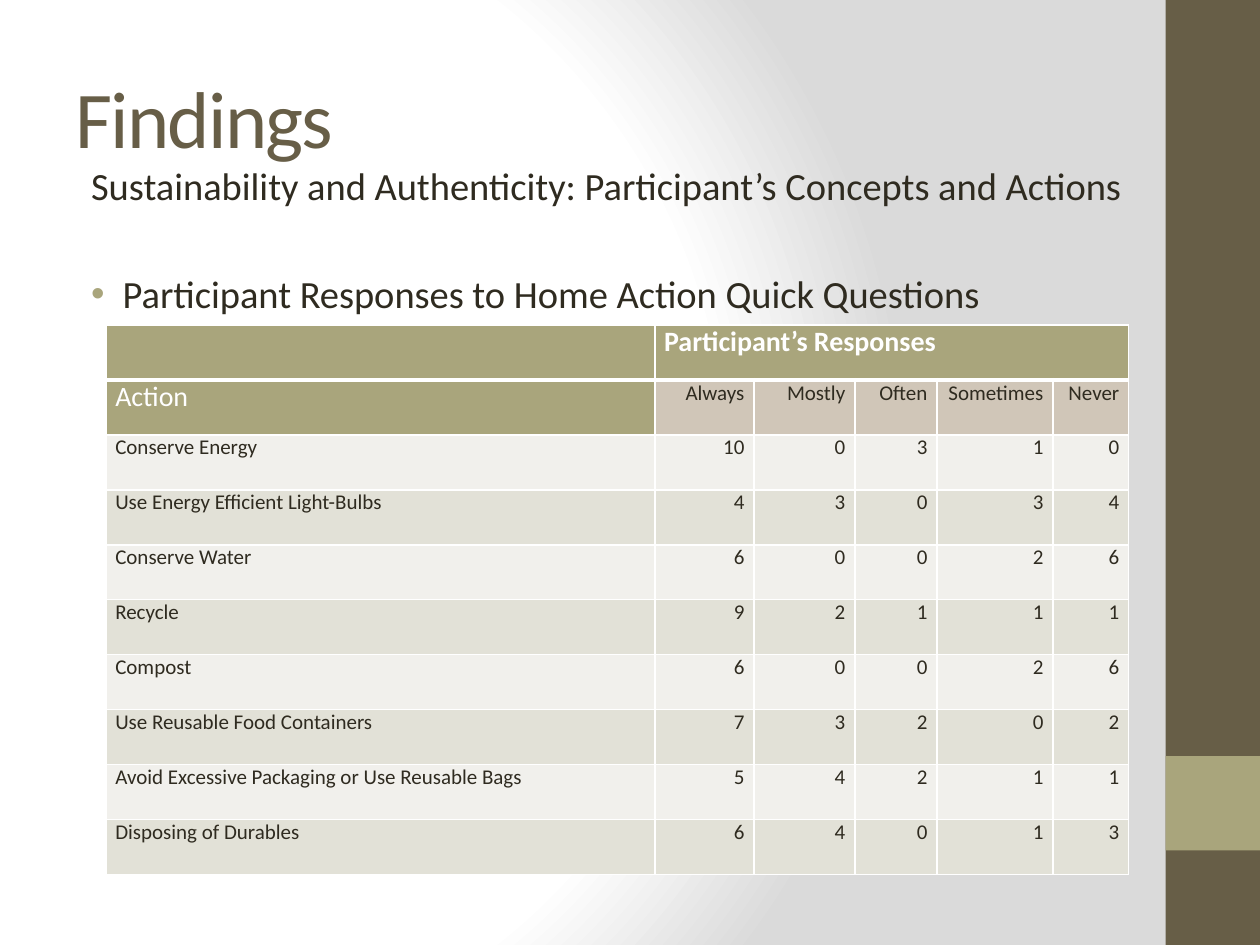
from dataclasses import dataclass

from pptx import Presentation
from pptx.dml.color import RGBColor
from pptx.enum.shapes import MSO_SHAPE
from pptx.enum.text import MSO_ANCHOR, PP_ALIGN
from pptx.oxml import parse_xml
from pptx.oxml.ns import nsdecls, qn
from pptx.util import Pt

RECTANGLE = MSO_SHAPE.RECTANGLE
MIDDLE = MSO_ANCHOR.MIDDLE
TOP = MSO_ANCHOR.TOP
JUSTIFY = PP_ALIGN.JUSTIFY
RIGHT = PP_ALIGN.RIGHT


@dataclass(frozen=True)
class Theme:
    font: str = "Calibri"
    brown: str = "675E47"
    olive: str = "A9A57C"
    ink: str = "2F2B20"
    white: str = "FFFFFF"
    grey: str = "DADADA"
    sand: str = "D0C6B8"
    bands: tuple = ("F1F0EC", "E2E1D7")
    title_size: float = 46
    body_size: float = 22
    heading_size: float = 16
    cell_size: float = 12


class FindingsPage:
    def __init__(self, deck, theme):
        self.theme = theme
        self.page = deck.slides.add_slide(deck.slide_layouts[6])

    def background(self):
        self.page.background.fill.gradient()
        gradient = self.page.element.find(".//" + qn("a:gradFill"))
        stops = ((0, self.theme.white), (75, self.theme.white), (100, self.theme.grey))
        marks = "".join(
            f'<a:gs pos="{place * 1000}"><a:srgbClr val="{color}"/></a:gs>'
            for place, color in stops
        )
        gradient.getparent().replace(gradient, parse_xml(
            f'<a:gradFill {nsdecls("a")} rotWithShape="1"><a:gsLst>{marks}</a:gsLst>'
            '<a:path path="circle"><a:fillToRect l="20000" t="50000" r="100000" b="50000"/>'
            '</a:path></a:gradFill>'
        ))

    def block(self, left, top, width, height, color):
        box = self.page.shapes.add_shape(RECTANGLE, Pt(left), Pt(top), Pt(width), Pt(height))
        box.shadow.inherit = False
        box.fill.solid()
        box.fill.fore_color.rgb = RGBColor.from_string(color)
        box.line.fill.background()

    def text_box(self, left, top, width, height, anchor=TOP):
        box = self.page.shapes.add_textbox(Pt(left), Pt(top), Pt(width), Pt(height))
        frame = box.text_frame
        frame.word_wrap = True
        frame.vertical_anchor = anchor
        return frame

    def set_text(self, para, text, size, color, bold=False):
        para.text = text
        para.font.name = self.theme.font
        para.font.size = Pt(size)
        para.font.bold = bold
        para.font.color.rgb = RGBColor.from_string(color)

    def title(self, text):
        para = self.text_box(36, 21.6, 600, 90, MIDDLE).paragraphs[0]
        self.set_text(para, text, self.theme.title_size, self.theme.brown)
        para.runs[0]._r.get_or_add_rPr().set("spc", "-100")

    def body(self, subtitle, point):
        frame = self.text_box(36, 89.3, 626.4, 414.7)
        first, second = frame.paragraphs[0], frame.add_paragraph()
        for para, text in ((first, subtitle), (second, point)):
            self.set_text(para, text, self.theme.body_size, self.theme.ink)
        self.indent(first, 9, 0)
        self.indent(second, 27, -18)
        second.space_before = Pt(35.3)
        properties = second._p.get_or_add_pPr()
        for mark in (
            f'<a:buClr {nsdecls("a")}><a:srgbClr val="{self.theme.olive}"/></a:buClr>',
            f'<a:buFont {nsdecls("a")} typeface="Arial"/>',
            f'<a:buChar {nsdecls("a")} char="•"/>',
        ):
            properties.insert_element_before(parse_xml(mark), "a:tabLst", "a:defRPr", "a:extLst")

    def indent(self, para, left, first_line):
        properties = para._p.get_or_add_pPr()
        properties.set("marL", str(Pt(left)))
        properties.set("indent", str(Pt(first_line)))

    def cell(self, cell, text, fill, size, color, align, bold=False, top=1, bottom=1):
        properties = cell._tc.get_or_add_tcPr()
        for side, width in (("L", 1), ("R", 1), ("T", top), ("B", bottom)):
            properties.append(parse_xml(
                f'<a:ln{side} {nsdecls("a")} w="{Pt(width)}"><a:solidFill>'
                f'<a:srgbClr val="{self.theme.white}"/></a:solidFill></a:ln{side}>'
            ))
        cell.fill.solid()
        cell.fill.fore_color.rgb = RGBColor.from_string(fill)
        cell.margin_left = cell.margin_right = Pt(5.4)
        cell.margin_top = cell.margin_bottom = 0
        para = cell.text_frame.paragraphs[0]
        para.alignment = align
        self.set_text(para, text, size, color, bold)

    def table(self, left, top, widths, row_height, heading, labels, answers):
        theme = self.theme
        rows = len(answers) + 2
        grid = self.page.shapes.add_table(
            rows, len(widths), Pt(left), Pt(top), Pt(sum(widths)), Pt(row_height * rows)
        ).table
        for column, width in zip(grid.columns, widths):
            column.width = Pt(width)
        for row in grid.rows:
            row.height = Pt(row_height)
        for column in range(len(widths)):
            self.cell(grid.cell(0, column), heading if column == 1 else "", theme.olive,
                      theme.heading_size, theme.white, JUSTIFY, bold=True, bottom=3)
        grid.cell(0, 1).merge(grid.cell(0, len(widths) - 1))
        self.cell(grid.cell(1, 0), labels[0], theme.olive,
                  theme.heading_size, theme.white, JUSTIFY, top=3)
        for column, label in enumerate(labels[1:], 1):
            self.cell(grid.cell(1, column), label, theme.sand,
                      theme.cell_size, theme.ink, RIGHT, top=3)
        for index, answer in enumerate(answers):
            for column, value in enumerate(answer):
                self.cell(grid.cell(index + 2, column), str(value), theme.bands[index % 2],
                          theme.cell_size, theme.ink, RIGHT if column else JUSTIFY)


LABELS = ("Action", "Always", "Mostly", "Often", "Sometimes", "Never")
ANSWERS = (
    ("Conserve Energy", 10, 0, 3, 1, 0),
    ("Use Energy Efficient Light-Bulbs", 4, 3, 0, 3, 4),
    ("Conserve Water", 6, 0, 0, 2, 6),
    ("Recycle", 9, 2, 1, 1, 1),
    ("Compost", 6, 0, 0, 2, 6),
    ("Use Reusable Food Containers", 7, 3, 2, 0, 2),
    ("Avoid Excessive Packaging or Use Reusable Bags", 5, 4, 2, 1, 1),
    ("Disposing of Durables", 6, 4, 0, 1, 3),
)


def main():
    deck = Presentation()
    deck.slide_width, deck.slide_height = Pt(720), Pt(540)
    theme = Theme()
    findings = FindingsPage(deck, theme)
    findings.background()
    findings.block(666, 0, 54, 540, theme.brown)
    findings.block(666, 432, 54, 54, theme.olive)
    findings.title("Findings")
    findings.body("Sustainability and Authenticity: Participant’s Concepts and Actions",
                  "Participant Responses to Home Action Quick Questions")
    findings.table(60.5, 185.8, (313.7, 56.6, 57.7, 46.9, 66.3, 43.4), 31.4,
                   "Participant’s Responses", LABELS, ANSWERS)
    deck.save("out.pptx")


if __name__ == "__main__":
    main()
